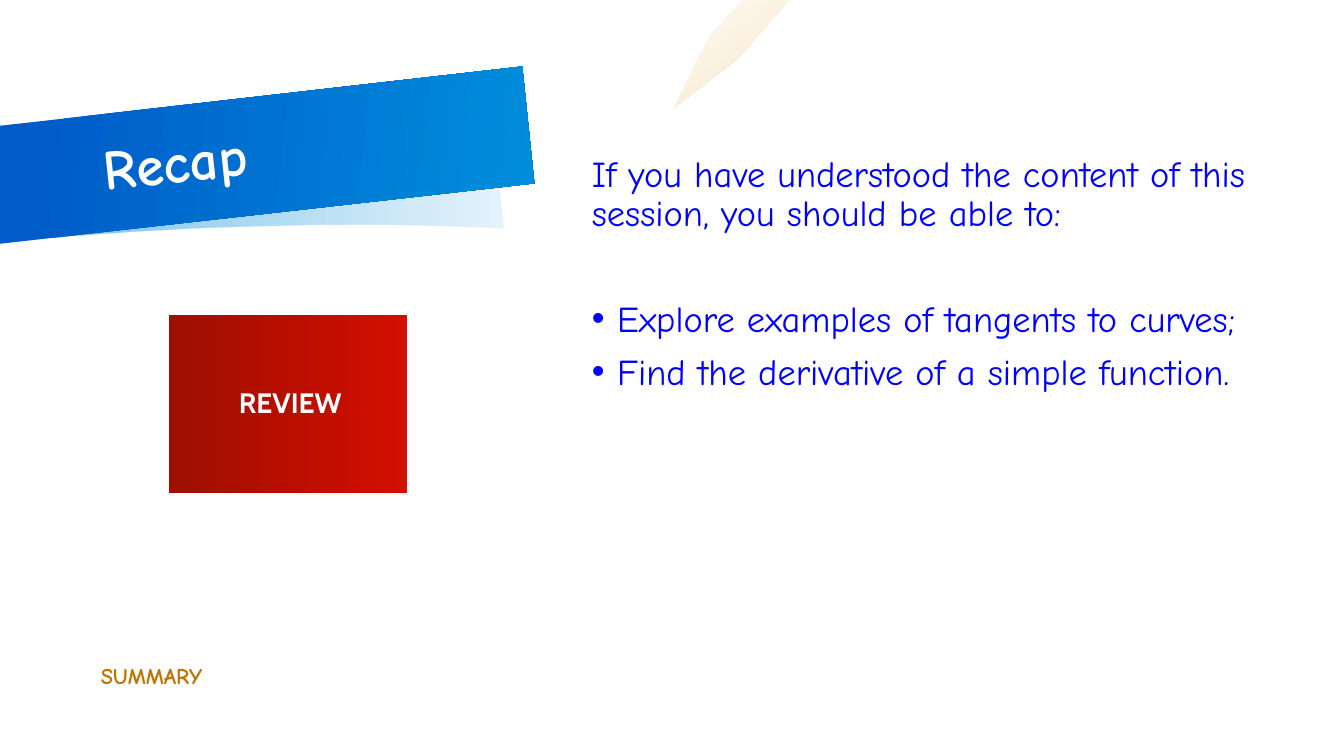
from lxml.etree import SubElement
from pptx import Presentation
from pptx.dml.color import RGBColor
from pptx.enum.text import MSO_ANCHOR, MSO_AUTO_SIZE, PP_ALIGN
from pptx.oxml.ns import qn
from pptx.util import Inches, Pt

WHITE = RGBColor(0xFF, 0xFF, 0xFF)
NAVY = RGBColor(0x00, 0x5C, 0xC9)
SKY = RGBColor(0x00, 0x8E, 0xDC)
AMBER = RGBColor(0xFF, 0xAA, 0x00)
BROWN = RGBColor(0xC0, 0x74, 0x00)
RED = RGBColor(0xD3, 0x0F, 0x00)
DARK_RED = RGBColor(0x9D, 0x0F, 0x00)
BLUE = RGBColor(0x00, 0x00, 0xFF)
HAND = "Comic Neue"
SANS = "Cabin"


def place(sp, box):
    sp.left, sp.top, sp.width, sp.height = (Inches(v) for v in box)


def fill_gradient(sp, stops, angle):
    """Fill with (position %, colour, opacity %) stops at a clockwise angle."""
    sp.fill.gradient()
    grad = sp._element.spPr.find(qn("a:gradFill"))
    for child in list(grad):
        grad.remove(child)
    stop_list = SubElement(grad, qn("a:gsLst"))
    for position, color, opacity in stops:
        stop = SubElement(stop_list, qn("a:gs"), pos=str(position * 1000))
        rgb = SubElement(stop, qn("a:srgbClr"), val=str(color))
        if opacity < 100:
            SubElement(rgb, qn("a:alpha"), val=str(opacity * 1000))
    SubElement(grad, qn("a:lin"), ang=str(angle * 60000), scaled="0")


def curve(p0, p1, p2, p3, steps=16):
    """Return points along a cubic Bezier curve, without its start."""
    points = []
    for i in range(1, steps + 1):
        t = i / steps
        weights = ((1 - t) ** 3, 3 * t * (1 - t) ** 2, 3 * t * t * (1 - t), t ** 3)
        points.append(tuple(sum(w * p[axis] for w, p in zip(weights, (p0, p1, p2, p3)))
                            for axis in (0, 1)))
    return points


def add_outline(slide, box, points, stops, angle):
    """Draw a closed outline whose points are relative to the box."""
    left, top = box
    points = [(Inches(left + x), Inches(top + y)) for x, y in points]
    builder = slide.shapes.build_freeform(*points[0])
    builder.add_line_segments(points[1:], close=True)
    sp = builder.convert_to_shape()
    sp.shadow.inherit = False
    sp.line.fill.background()
    fill_gradient(sp, stops, angle)


def format_frame(sp, insets=(0.1, 0.05, 0.1, 0.05), anchor=MSO_ANCHOR.MIDDLE):
    left, top, right, bottom = (Inches(v) for v in insets)
    values = {"margin_left": left, "margin_top": top, "margin_right": right,
              "margin_bottom": bottom, "vertical_anchor": anchor,
              "word_wrap": True, "auto_size": MSO_AUTO_SIZE.NONE}
    for name, value in values.items():
        setattr(sp.text_frame, name, value)


def write(p, text, font, align=PP_ALIGN.LEFT, before=0, bullet=False, spacing=0.9):
    pPr = p._p.get_or_add_pPr()
    indent = Inches(0.25) if bullet else 0
    pPr.set("marL", str(indent))
    pPr.set("indent", str(-indent))
    if bullet:
        SubElement(pPr, qn("a:buFont"), typeface="Arial")
        SubElement(pPr, qn("a:buChar"), char="•")
    else:
        SubElement(pPr, qn("a:buNone"))
    values = {"alignment": align, "line_spacing": spacing, "space_before": Pt(before)}
    for name, value in values.items():
        setattr(p, name, value)
    r = p.add_run()
    r.text = text
    for name, value in font.items():
        if name == "color":
            r.font.color.rgb = value
        else:
            setattr(r.font, name, value)


def add_banner(slide, title, box):
    left, top = box
    shade = [(4.99, 1.63), (4.87, 0.49)]
    shade += curve(shade[-1], (4.87, 0.49), (3.13, 0.3), (-0.02, 0.61))
    shade.append((-0.02, 1.77))
    shade += curve(shade[-1], (2.86, 1.48), (4.99, 1.63), (4.99, 1.63))
    add_outline(slide, box, shade, [(0, SKY, 10), (88, SKY, 50)], 180)
    add_outline(slide, box, [(-0.01, 1.78), (5.3, 1.18), (5.18, 0.02), (-0.01, 0.61)],
                [(9, NAVY, 100), (100, SKY, 100)], 6)
    place(title, (left + 0.92, top + 0.28, 4.33, 1.16))
    title.rotation = 354
    format_frame(title)
    write(title.text_frame.paragraphs[0], "Recap",
          {"name": HAND, "size": Pt(40), "bold": True, "color": WHITE})


def add_pencil(slide, box):
    add_outline(slide, box, [(0.68, 0), (0.35, 0.38), (0, 1.09), (0.65, 0.59), (1.16, 0)],
                [(0, AMBER, 5), (100, BROWN, 20)], 53)


def add_review_card(sp, box):
    place(sp, box)
    fill_gradient(sp, [(0, RED, 100), (100, DARK_RED, 100)], 180)
    format_frame(sp, (0.16, 0.12, 0.12, 0.12))
    write(sp.text_frame.paragraphs[0], "REVIEW",
          {"name": SANS, "size": Pt(20), "bold": True, "color": WHITE}, PP_ALIGN.CENTER)


def add_outcomes(sp, box):
    place(sp, box)
    format_frame(sp, anchor=MSO_ANCHOR.TOP)
    font = {"name": HAND, "size": Pt(26), "bold": False, "color": BLUE}
    tf = sp.text_frame
    write(tf.paragraphs[0],
          "If you have understood the content of this session, you should be able to:", font)
    outcomes = (("Explore examples of tangents to curves;", 47),
                ("Find the derivative of a simple function.", 10))
    for text, before in outcomes:
        write(tf.add_paragraph(), text, font, before=before, bullet=True)


def add_section_label(slide, box):
    sp = slide.shapes.add_textbox(*(Inches(v) for v in box))
    format_frame(sp, (0, 0.05, 0.1, 0.05))
    write(sp.text_frame.paragraphs[0], "SUMMARY",
          {"name": HAND, "size": Pt(16), "bold": True, "color": BROWN}, spacing=1.0)


def bring_to_front(sp):
    sp._element.getparent().append(sp._element)


def main():
    prs = Presentation()
    prs.slide_width, prs.slide_height = Inches(13.33), Inches(7.5)
    slide = prs.slides.add_slide(prs.slide_layouts[3])
    title, card, outcomes = slide.placeholders
    add_banner(slide, title, (0, 0.64))
    add_pencil(slide, (6.67, 0))
    add_section_label(slide, (1, 6.5, 3.8, 0.4))
    add_review_card(card, (1.68, 3.13, 2.36, 1.76))
    add_outcomes(outcomes, (5.77, 1.5, 7.56, 5.4))
    for sp in (title, card, outcomes):
        bring_to_front(sp)
    prs.save("out.pptx")


if __name__ == "__main__":
    main()
